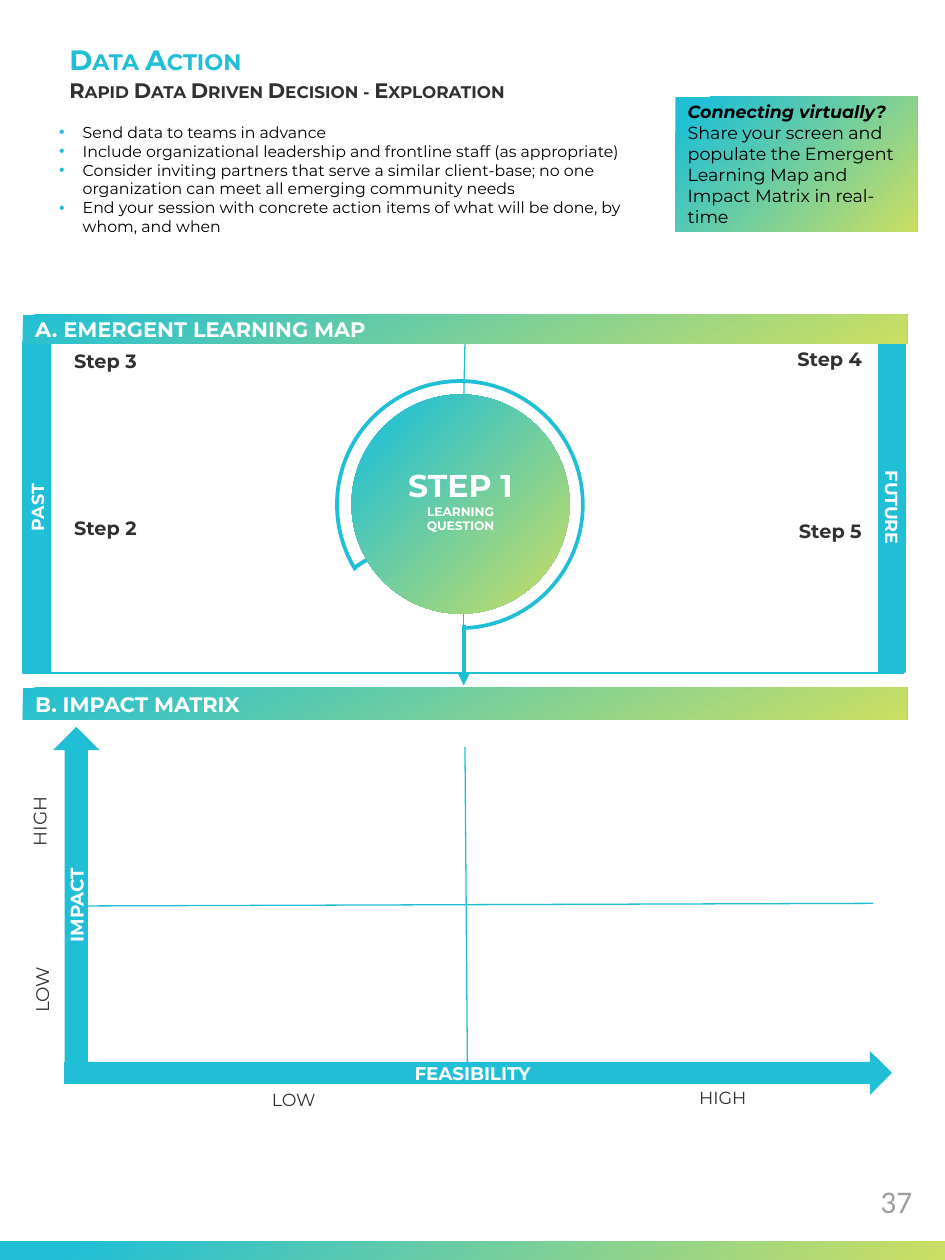
from lxml import etree
from pptx import Presentation
from pptx.dml.color import RGBColor
from pptx.enum.shapes import MSO_CONNECTOR, MSO_SHAPE
from pptx.enum.text import MSO_ANCHOR, MSO_AUTO_SIZE, PP_ALIGN
from pptx.oxml.ns import qn
from pptx.util import Pt

LEFT, CENTER, RIGHT = PP_ALIGN.LEFT, PP_ALIGN.CENTER, PP_ALIGN.RIGHT
TOP, MIDDLE = MSO_ANCHOR.TOP, MSO_ANCHOR.MIDDLE
RECT, OVAL = MSO_SHAPE.RECTANGLE, MSO_SHAPE.OVAL
ARC, ARROW = MSO_SHAPE.BLOCK_ARC, MSO_SHAPE.RIGHT_ARROW
STRAIGHT = MSO_CONNECTOR.STRAIGHT
COLORS = {
    "teal": "20BFD6", "lime": "CCDE62", "banner_teal": "21BFD5", "banner_lime": "CCDF62",
    "white": "FFFFFF", "black": "000000", "ink": "313131", "gray": "9E9E9E",
}


def add_run(paragraph, text, size, color, bold=False, italic=False, face="Montserrat"):
    run = paragraph.add_run()
    run.text = text
    run.font.name = face
    run.font.size = Pt(size)
    run.font.bold = bold
    run.font.italic = italic
    run.font.color.rgb = RGBColor.from_string(COLORS[color])
    return run


def add_block(kind, box, fill, rotation=0):
    block = slide.shapes.add_shape(kind, *map(Pt, box))
    block.rotation = rotation
    block.shadow.inherit = False
    block.line.fill.background()
    block.text_frame.word_wrap = True
    block.text_frame.vertical_anchor = MIDDLE
    if isinstance(fill, str):
        block.fill.solid()
        block.fill.fore_color.rgb = RGBColor.from_string(COLORS[fill])
    else:
        start, end, offset, angle = fill
        block.fill.gradient()
        block.fill.gradient_angle = 360 - angle
        for stop, color, position in zip(block.fill.gradient_stops, (start, end), (offset, 1)):
            stop.color.rgb = RGBColor.from_string(COLORS[color])
            stop.position = position
    return block


BLEND = ("teal", "lime", 0.08, 45)
BANNER = ("banner_teal", "banner_lime", 0, 65)

deck = Presentation()
deck.slide_width, deck.slide_height = Pt(540), Pt(720)
slide = deck.slides.add_slide(deck.slide_layouts[1])

title, advice = slide.shapes.title, slide.placeholders[1]
for holder, box in ((title, (32.4, 19.4, 486.7, 42.5)), (advice, (26.6, 55.4, 353.5, 83.5))):
    holder.left, holder.top, holder.width, holder.height = map(Pt, box)
    holder.text_frame.word_wrap = True
    holder.text_frame.auto_size = MSO_AUTO_SIZE.NONE
    holder.text_frame.vertical_anchor = TOP

heading = title.text_frame.paragraphs[0]
heading.alignment = LEFT
heading.line_spacing = 1.07
topic = add_run(heading, "Data Action ", 16, "teal", True)
heading.add_line_break()
subtopic = add_run(heading, "Rapid Data Driven Decision - Exploration", 12, "ink", True)
for run in (topic, subtopic):
    run.font._element.set("cap", "small")

advice.text_frame.margin_top = Pt(14.5)
tips = [
    "Send data to teams in advance",
    "Include organizational leadership and frontline staff (as appropriate)",
    "Consider inviting partners that serve a similar client-base; no one organization "
    "can meet all emerging community needs",
    "End your session with concrete action items of what will be done, by whom, and when",
]
for i, tip in enumerate(tips):
    paragraph = advice.text_frame.add_paragraph() if i else advice.text_frame.paragraphs[0]
    paragraph.alignment = LEFT
    paragraph.space_before = Pt(0)
    add_run(paragraph, tip, 9, "black")
    props = paragraph._p.get_or_add_pPr()
    props.set("marL", str(Pt(13.5)))
    props.set("indent", str(-Pt(13.5)))
    bullet_color = etree.SubElement(props, qn("a:buClr"))
    etree.SubElement(bullet_color, qn("a:srgbClr"), val=COLORS["teal"])
    etree.SubElement(props, qn("a:buFont"), typeface="Arial")
    etree.SubElement(props, qn("a:buChar"), char="•")

add_block(RECT, (0, 709.2, 540, 10.8), BLEND)

learning_panel = add_block(RECT, (13, 195.1, 503.3, 189.4), "white")
learning_panel.fill.background()
learning_panel.line.color.rgb = RGBColor.from_string(COLORS["teal"])
learning_panel.line.width = Pt(1)

rules = [
    (195.1, 195.1, 21.6, 195.1, 0.75, False),
    (509.8, 195.8, 334.8, 195.8, 0.75, False),
    (265.7, 196.6, 265, 229.7, 0.75, False),
    (265, 349.9, 265, 384.5, 0.75, False),
    (203, 324, 220.3, 313.2, 2.25, False),
    (265, 357.1, 265, 391.7, 2.25, True),
    (265.7, 427, 267.1, 608.4, 0.75, False),
    (45.4, 517.7, 499, 516.2, 0.75, False),
]
for x1, y1, x2, y2, weight, pointed in rules:
    rule = slide.shapes.add_connector(STRAIGHT, Pt(x1), Pt(y1), Pt(x2), Pt(y2))
    rule.line.color.rgb = RGBColor.from_string(COLORS["teal"])
    rule.line.width = Pt(weight)
    outline = rule._element.spPr.find(qn("a:ln"))
    if pointed:
        etree.SubElement(outline, qn("a:tailEnd"), type="triangle")
    etree.SubElement(rule._element.spPr, qn("a:effectLst"))

question = add_block(OVAL, (200.9, 225.4, 124.6, 125.3), BLEND)
question.text_frame.margin_bottom = Pt(8.5)
step_line = question.text_frame.paragraphs[0]
prompt_line = question.text_frame.add_paragraph()
for paragraph, text, size in ((step_line, "STEP 1", 18), (prompt_line, "LEARNING QUESTION", 7)):
    paragraph.alignment = CENTER
    add_run(paragraph, text, size, "white", True)

cycle = add_block(ARC, (191.5, 216.7, 142.6, 143.3), "teal")
for i, value in enumerate((88.743, 52.857, 0.015)):
    cycle.adjustments[i] = value

bands = [
    ("PAST", RECT, (-73.4, 282.2, 189.4, 15.8), 270, "teal", 10, CENTER),
    ("FUTURE", RECT, (415.4, 282.2, 188.6, 15.8), 90, "teal", 10, CENTER),
    ("FEASIBILITY", ARROW, (36.7, 600.5, 473, 25.2), 0, "teal", 10.5, CENTER),
    ("IMPACT", ARROW, (-54.7, 500.4, 196.6, 26.6), 270, "teal", 10.5, CENTER),
    ("A. EMERGENT LEARNING MAP", RECT, (13, 180, 505.4, 16.6), 0, BANNER, 12, LEFT),
    ("B. IMPACT MATRIX", RECT, (13, 393.1, 505.4, 18), 0, BANNER, 12, LEFT),
]
for text, kind, box, rotation, fill, size, alignment in bands:
    band = add_block(kind, box, fill, rotation)
    paragraph = band.text_frame.paragraphs[0]
    paragraph.alignment = alignment
    add_run(paragraph, text, size, "white", True)

labels = [
    ("Step 2", (35.3, 291.6, 189.4, 93.6), 0, 11, True, LEFT),
    ("Step 3", (35.3, 195.8, 153.4, 79.2), 0, 11, True, LEFT),
    ("Step 4", (344.9, 195.1, 154.8, 93.6), 0, 11, True, RIGHT),
    ("Step 5", (357.8, 293, 141.8, 108), 0, 11, True, RIGHT),
    ("LOW", (148.3, 618.5, 76.3, 19.4), 0, 10, False, LEFT),
    ("HIGH", (392.4, 617.8, 43.9, 19.4), 0, 10, False, LEFT),
    ("LOW", (1.4, 553, 45.4, 20.2), 270, 10.5, False, LEFT),
    ("HIGH", (-0.7, 457.2, 46.8, 20.2), 270, 10.5, False, LEFT),
]
for text, box, rotation, size, bold, alignment in labels:
    label = slide.shapes.add_textbox(*map(Pt, box))
    label.rotation = rotation
    label.text_frame.word_wrap = True
    paragraph = label.text_frame.paragraphs[0]
    paragraph.alignment = alignment
    add_run(paragraph, text, size, "ink", bold)

callout = add_block(RECT, (385.9, 55.4, 138.2, 77), BLEND)
hook = callout.text_frame.paragraphs[0]
hook.alignment = LEFT
add_run(hook, "Connecting virtually?", 10, "black", True, True)
guidance = callout.text_frame.add_paragraph()
guidance.alignment = LEFT
add_run(guidance, "Share your screen and populate the Emergent Learning Map "
        "and Impact Matrix in real-time", 10, "black")

folio = slide.shapes.add_textbox(Pt(399.6), Pt(667.4), Pt(121.7), Pt(38.2)).text_frame
folio.word_wrap = True
folio.vertical_anchor = MIDDLE
folio.margin_left = folio.margin_right = folio.margin_top = folio.margin_bottom = 0
folio.paragraphs[0].alignment = RIGHT
add_run(folio.paragraphs[0], "37", 18, "gray", face="Calibri")

deck.save("out.pptx")
